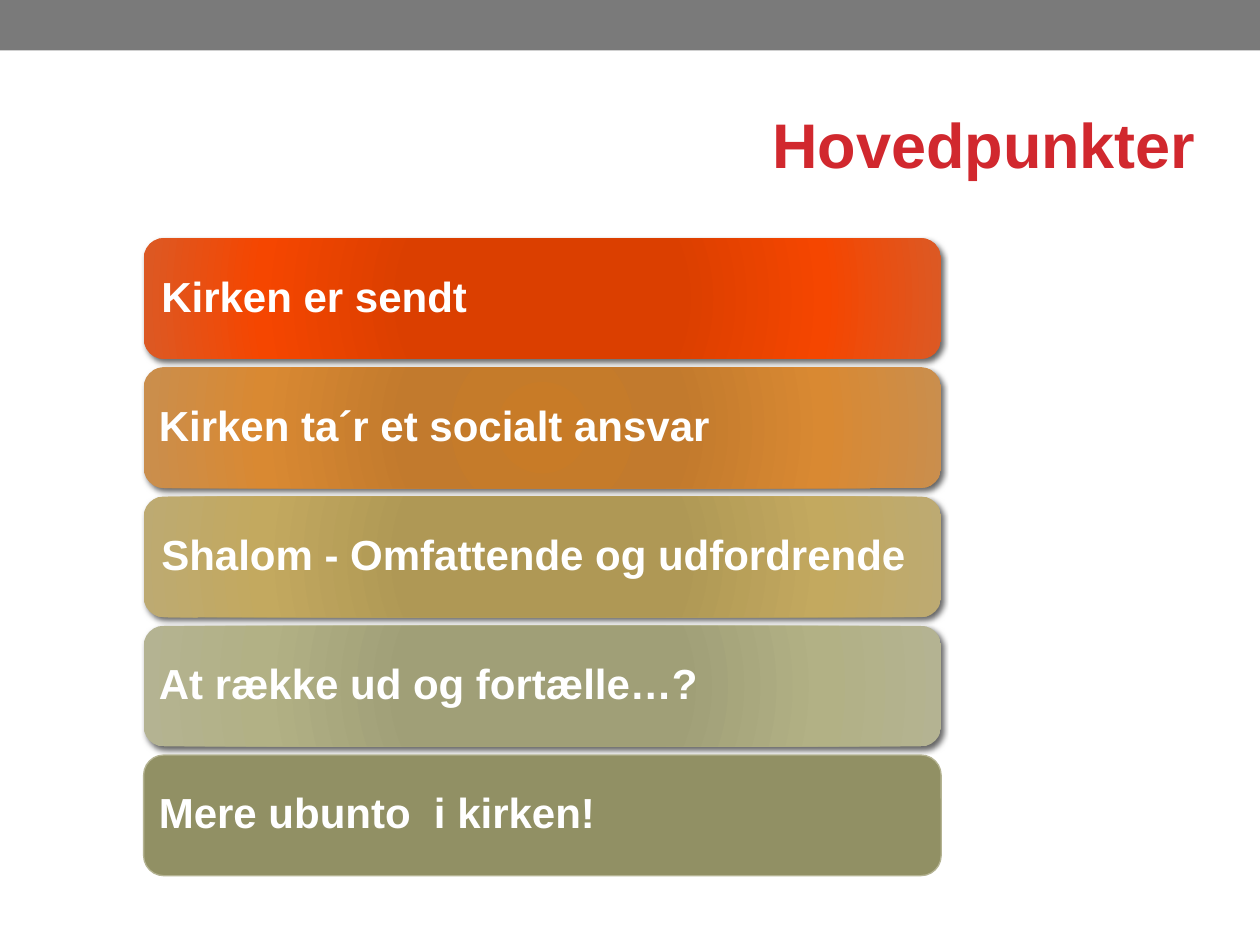
from pptx import Presentation
from pptx.dml.color import RGBColor
from pptx.enum.shapes import MSO_SHAPE as Shape
from pptx.enum.text import MSO_ANCHOR as Anchor, PP_ALIGN as Align
from pptx.oxml import parse_xml
from pptx.oxml.ns import nsdecls
from pptx.util import Inches, Pt

WIDTH, HEIGHT = 10, 7.5
FONT = "Arial"
COLORS = {"band": "7A7A7A", "title": "D1282E", "text": "FFFFFF",
          "olive": "919064", "edge": "B4B392", "shadow": "000000"}
STOPS = (0, 34, 70, 100)
CORNER = 0.16      # corner radius of a bar
BAR_SHARE = 0.934  # bar height as a share of its row

# Text, inset, and gradient colours from the centre out (None: plain bar)
POINTS = [
    ("Kirken er sendt", 0.14, ("DB3F00", "DB3F00", "F54600", "DC5924")),
    ("Kirken ta´r et socialt ansvar", 0.12, ("C87B27", "C27A2D", "D98932", "CA8E4D")),
    ("Shalom - Omfattende og udfordrende", 0.14, ("B29A52", "AF9855", "C3A95F", "BDAA72")),
    ("At række ud og fortælle…?", 0.12, ("A1A076", "A09F77", "B2B185", "B4B392")),
    ("Mere ubunto  i kirken!", 0.12, None),
]


def rgb(name):
    return RGBColor.from_string(COLORS[name])


def place(s, box):
    s.left, s.top, s.width, s.height = (Inches(v) for v in box)


def add_run(p, text, size, color):
    r = p.add_run()
    r.text = text
    r.font.name, r.font.size, r.font.bold = FONT, Pt(size), True
    r.font.color.rgb = rgb(color)


def add_band(slide, box):
    s = slide.shapes.add_shape(Shape.RECTANGLE, *(Inches(v) for v in box))
    s.shadow.inherit = False
    s.fill.solid()
    s.fill.fore_color.rgb = rgb("band")
    s.line.fill.background()


def add_title(slide, box, text):
    s = slide.shapes.title
    place(s, box)
    tf = s.text_frame
    tf.vertical_anchor = Anchor.MIDDLE
    p = tf.paragraphs[0]
    p.alignment = Align.RIGHT
    add_run(p, text, 36, "title")


def glow_fill(s, colors):
    """Give a bar its radial gradient and its drop shadow."""
    stops = "".join(f'<a:gs pos="{pos * 1000}"><a:srgbClr val="{c}"/></a:gs>'
                    for pos, c in zip(STOPS, colors))
    sp_pr = s._element.spPr
    sp_pr.insert(2, parse_xml(
        f'<a:gradFill {nsdecls("a")} rotWithShape="1"><a:gsLst>{stops}</a:gsLst>'
        '<a:path path="circle"><a:fillToRect l="100000" t="100000" '
        'r="100000" b="100000"/></a:path></a:gradFill>'))
    effects = sp_pr.find("{*}effectLst")
    effects.append(parse_xml(
        f'<a:outerShdw {nsdecls("a")} blurRad="{Pt(3)}" dist="{Pt(2)}" '
        f'dir="{45 * 60000}" algn="tl" rotWithShape="0">'
        f'<a:srgbClr val="{COLORS["shadow"]}"><a:alpha val="60000"/></a:srgbClr>'
        '</a:outerShdw>'))


def add_bar(slide, box, text, inset, colors):
    s = slide.shapes.add_shape(Shape.ROUNDED_RECTANGLE, *(Inches(v) for v in box))
    s.adjustments[0] = CORNER / box[3]
    s.shadow.inherit = False
    if colors:
        glow_fill(s, colors)
        s.line.fill.background()
    else:
        s.fill.solid()
        s.fill.fore_color.rgb = rgb("olive")
        s.line.color.rgb = rgb("edge")
        s.line.width = Pt(0.75)
    tf = s.text_frame
    tf.word_wrap = True
    tf.vertical_anchor = Anchor.MIDDLE
    # The rounded corners already push the text in by 0.29 of their radius
    margin = Inches(inset - 0.29 * CORNER)
    tf.margin_left = tf.margin_right = tf.margin_top = tf.margin_bottom = margin
    p = tf.paragraphs[0]
    p.alignment = Align.LEFT
    p.line_spacing = 0.9
    add_run(p, text, 24, "text")


def add_points(slide, box, points):
    left, top, width, height = box
    row = height / (len(points) - 1 + BAR_SHARE)
    for i, point in enumerate(points):
        add_bar(slide, (left, top + i * row, width, row * BAR_SHARE), *point)


def main():
    prs = Presentation()
    prs.slide_width, prs.slide_height = Inches(WIDTH), Inches(HEIGHT)
    slide = prs.slides.add_slide(prs.slide_layouts[5])
    # Top band, heading, stacked bars
    add_band(slide, (0, 0, WIDTH, 0.4))
    add_title(slide, (0.59, 0.6, 0.9 * WIDTH, 1.08), "Hovedpunkter")
    add_points(slide, (1.14, 1.89, 6.33, 5.06), POINTS)
    prs.save("out.pptx")


if __name__ == "__main__":
    main()
